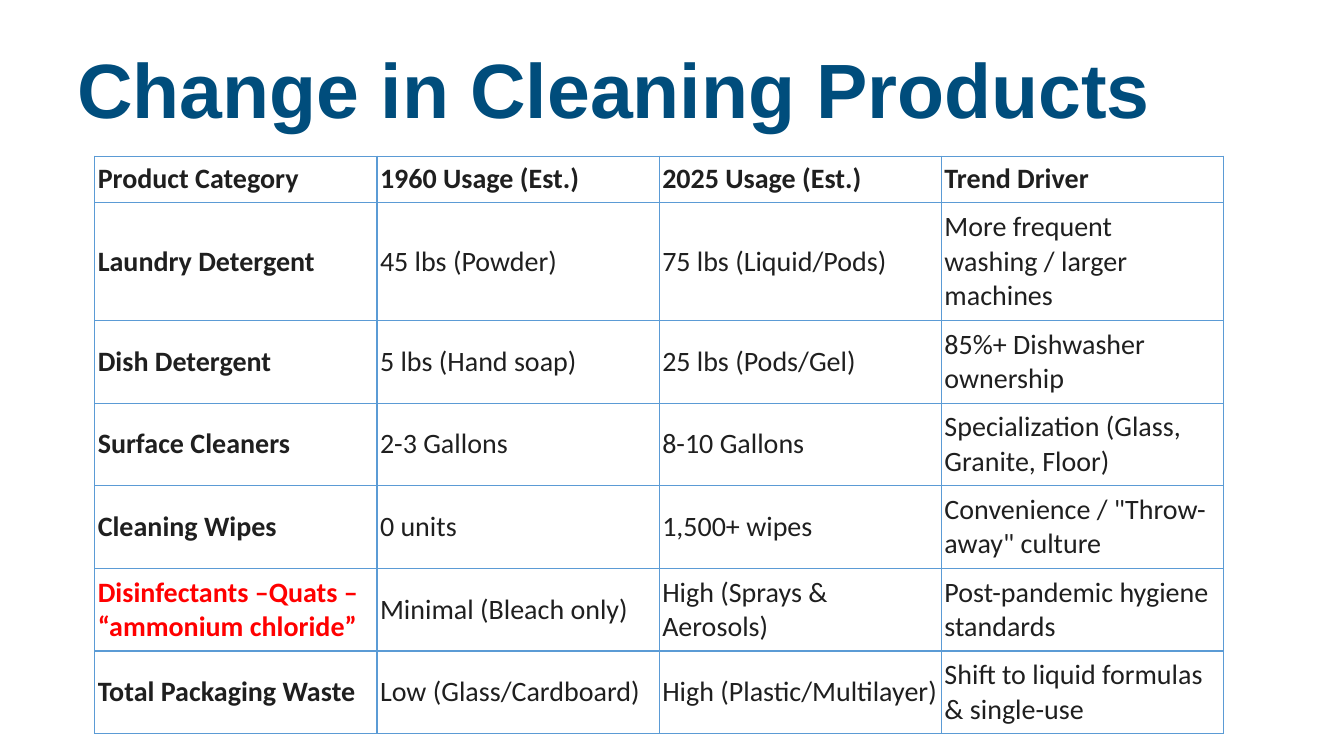
"""Build the slide on how cleaning product usage changed from 1960 to 2025."""
from dataclasses import astuple, dataclass

from lxml import etree
from pptx import Presentation
from pptx import util as u
from pptx.dml.color import RGBColor
from pptx.enum import text
from pptx.oxml import ns

INK, RED, NAVY, BORDER = "1F1F1F", "FF0000", "004D7C", "5B9BD5"
COL_WIDTH = 201.6
ROW_HEIGHTS = [33.12, 84.24] + [59.04] * 5


@dataclass
class Product:
    category: str
    usage_1960: str
    usage_2025: str
    driver: str


HEADER = Product("Product Category", "1960 Usage (Est.)", "2025 Usage (Est.)", "Trend Driver")
QUATS = Product("Disinfectants –Quats – “ammonium chloride”", "Minimal (Bleach only)",
                "High (Sprays & Aerosols)", "Post-pandemic hygiene standards")
ROWS = [
    HEADER,
    Product("Laundry Detergent", "45 lbs (Powder)", "75 lbs (Liquid/Pods)",
            "More frequent washing / larger machines"),
    Product("Dish Detergent", "5 lbs (Hand soap)", "25 lbs (Pods/Gel)",
            "85%+ Dishwasher ownership"),
    Product("Surface Cleaners", "2-3 Gallons", "8-10 Gallons",
            "Specialization (Glass, Granite, Floor)"),
    Product("Cleaning Wipes", "0 units", "1,500+ wipes",
            'Convenience / "Throw-away" culture'),
    QUATS,
    Product("Total Packaging Waste", "Low (Glass/Cardboard)", "High (Plastic/Multilayer)",
            "Shift to liquid formulas & single-use"),
]


def rgb(value: str) -> RGBColor:
    return RGBColor.from_string(value)


def write(tf, words: str, *, size: float, font: str, color: str, bold: bool,
          spacing: float = 1.0) -> None:
    p = tf.paragraphs[0]
    p.alignment = text.PP_ALIGN.LEFT
    p.line_spacing = spacing
    r = p.add_run()
    r.text = words
    r.font.size, r.font.name, r.font.bold = u.Pt(size), font, bold
    r.font.color.rgb = rgb(color)


def add_borders(cell, color: str, width: float) -> None:
    tc_pr = cell._tc.get_or_add_tcPr()
    for side in ("a:lnL", "a:lnR", "a:lnT", "a:lnB"):
        ln = etree.SubElement(tc_pr, ns.qn(side), w=str(u.Pt(width)))
        fill = etree.SubElement(ln, ns.qn("a:solidFill"))
        etree.SubElement(fill, ns.qn("a:srgbClr"), val=color)


def format_cell(cell) -> None:
    cell.vertical_anchor = text.MSO_ANCHOR.MIDDLE
    cell.margin_left = cell.margin_right = u.Pt(2.16)
    cell.margin_top = cell.margin_bottom = u.Pt(1.44)
    add_borders(cell, BORDER, 1)
    cell.fill.background()


def add_title(s) -> None:
    sp = s.shapes.title
    sp.left, sp.top, sp.width, sp.height = map(u.Pt, (48, 21.6, 864, 90))
    tf = sp.text_frame
    tf.vertical_anchor = text.MSO_ANCHOR.MIDDLE
    tf.auto_size = text.MSO_AUTO_SIZE.NONE
    write(tf, "Change in Cleaning Products", size=55, font="Arial", color=NAVY,
          bold=True, spacing=0.9)


def add_usage_table(s) -> None:
    columns = len(astuple(HEADER))
    frame = s.shapes.add_table(len(ROWS), columns, u.Pt(67.7), u.Pt(111.6),
                               u.Pt(COL_WIDTH * columns), u.Pt(sum(ROW_HEIGHTS)))
    table = frame.table
    table.first_row = table.horz_banding = False
    for column in table.columns:
        column.width = u.Pt(COL_WIDTH)
    for i, (product, height) in enumerate(zip(ROWS, ROW_HEIGHTS)):
        table.rows[i].height = u.Pt(height)
        for j, words in enumerate(astuple(product)):
            cell = table.cell(i, j)
            format_cell(cell)
            write(cell.text_frame, words, size=20, font="Calibri",
                  color=RED if product is QUATS and j == 0 else INK,
                  bold=product is HEADER or j == 0)


def main() -> None:
    prs = Presentation()
    prs.slide_width, prs.slide_height = u.Pt(960), u.Pt(540)
    s = prs.slides.add_slide(prs.slide_layouts[5])
    add_title(s)
    add_usage_table(s)
    prs.save("out.pptx")


if __name__ == "__main__":
    main()
